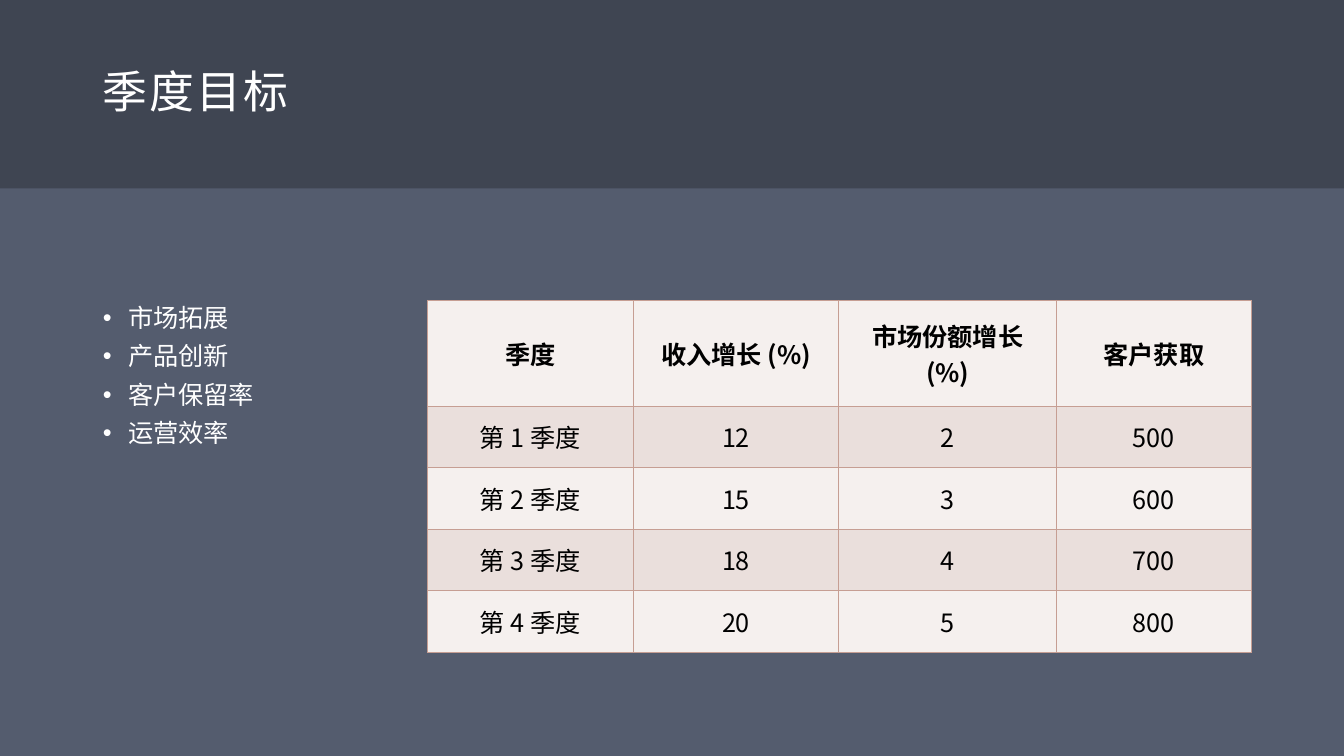
import pptx
import pptx.dml.color
import pptx.enum.shapes
import pptx.enum.text
import pptx.oxml
import pptx.oxml.ns
import pptx.util
from pptx.util import Inches

GOALS = ["市场拓展", "产品创新", "客户保留率", "运营效率"]
TARGETS = [
    ["季度", "收入增长 (%)", "市场份额增长 (%)", "客户获取"],
    ["第 1 季度", "12", "2", "500"],
    ["第 2 季度", "15", "3", "600"],
    ["第 3 季度", "18", "4", "700"],
    ["第 4 季度", "20", "5", "800"],
]


def rgb(code):
    return pptx.dml.color.RGBColor.from_string(code)


def add_element(parent, tag, **attributes):
    element = pptx.oxml.parse_xml(f"<a:{tag} {pptx.oxml.ns.nsdecls('a')}/>")
    for name, value in attributes.items():
        element.set(name, str(value))
    parent.append(element)
    return element


class GoalsPage:
    """Holds the style and the page that is being filled."""

    font = "Noto Sans CJK SC"
    background = "545C6E"
    band_fill = "3F4552"
    light_text = "FFFFFF"
    dark_text = "000000"
    row_fills = ["F5F0EE", "EADFDC"]
    border = "C69E93"
    body_size = 18

    def __init__(self, deck):
        self.page = deck.slides.add_slide(deck.slide_layouts[1])
        fill = self.page.background.fill
        fill.solid()
        fill.fore_color.rgb = rgb(self.background)

    def format_text(self, para, size, color, bold=False):
        for span in para.runs:
            span.font.size = pptx.util.Pt(size)
            span.font.bold = bold
            span.font.name = self.font
            span.font.color.rgb = rgb(color)
            add_element(span.font._element, "ea", typeface=self.font)

    def place(self, box, left, top, width, height):
        box.left, box.top = Inches(left), Inches(top)
        box.width, box.height = Inches(width), Inches(height)
        box.text_frame.word_wrap = True
        box.text_frame.auto_size = pptx.enum.text.MSO_AUTO_SIZE.NONE

    def band(self, width, height):
        """Draw the header band behind everything else."""
        shapes = self.page.shapes
        band = shapes.add_shape(pptx.enum.shapes.MSO_SHAPE.RECTANGLE,
                                0, 0, Inches(width), Inches(height))
        band.shadow.inherit = False
        band.fill.solid()
        band.fill.fore_color.rgb = rgb(self.band_fill)
        band.line.fill.background()
        shapes._spTree.insert(2, band._element)

    def title(self, text, *bounds):
        box = self.page.shapes.title
        self.place(box, *bounds)
        box.text_frame.vertical_anchor = pptx.enum.text.MSO_ANCHOR.MIDDLE
        box.text_frame.text = text
        para = box.text_frame.paragraphs[0]
        para.alignment = pptx.enum.text.PP_ALIGN.LEFT
        para.line_spacing = 0.9
        self.format_text(para, 32, self.light_text)
        para.runs[0].font._element.set("spc", "150")

    def bullets(self, items, *bounds):
        box = self.page.placeholders[1]
        self.place(box, *bounds)
        box.text_frame.text = "\n".join(items)
        for index, para in enumerate(box.text_frame.paragraphs):
            para.line_spacing = 0.9
            para.space_before = pptx.util.Pt(8 if index else 0)
            properties = para._p.get_or_add_pPr()
            properties.set("marL", str(Inches(0.25)))
            properties.set("indent", str(Inches(-0.25)))
            add_element(properties, "buFont", typeface="Arial")
            add_element(properties, "buChar", char="•")
            self.format_text(para, self.body_size, self.light_text)

    def table(self, rows, left, top, widths, heights):
        frame = self.page.shapes.add_table(
            len(rows), len(widths), Inches(left), Inches(top),
            Inches(sum(widths)), Inches(sum(heights)))
        grid = frame.table
        for column, width in zip(grid.columns, widths):
            column.width = Inches(width)
        for index, (row, height) in enumerate(zip(grid.rows, heights)):
            row.height = Inches(height)
            for cell, text in zip(row.cells, rows[index]):
                self.cell(cell, text, self.row_fills[index % 2], index == 0)

    def cell(self, cell, text, fill, bold):
        cell.text_frame.text = text
        cell.vertical_anchor = pptx.enum.text.MSO_ANCHOR.MIDDLE
        para = cell.text_frame.paragraphs[0]
        para.alignment = pptx.enum.text.PP_ALIGN.CENTER
        self.format_text(para, self.body_size, self.dark_text, bold)
        properties = cell._tc.get_or_add_tcPr()
        for side in ("lnL", "lnR", "lnT", "lnB"):
            line = add_element(properties, side, w=pptx.util.Pt(1))
            add_element(add_element(line, "solidFill"), "srgbClr", val=self.border)
        cell.fill.solid()
        cell.fill.fore_color.rgb = rgb(fill)


def main():
    deck = pptx.Presentation()
    deck.slide_width, deck.slide_height = Inches(13.33), Inches(7.5)
    goals = GoalsPage(deck)
    goals.band(13.33, 1.87)
    goals.title("季度目标", 0.92, 0, 8.6, 1.87)
    goals.bullets(GOALS, 0.92, 2.98, 3, 3.5)
    goals.table(TARGETS, 4.24, 2.98, [2.04, 2.04, 2.16, 1.93], [1.05] + [0.61] * 4)
    deck.save("out.pptx")


if __name__ == "__main__":
    main()
